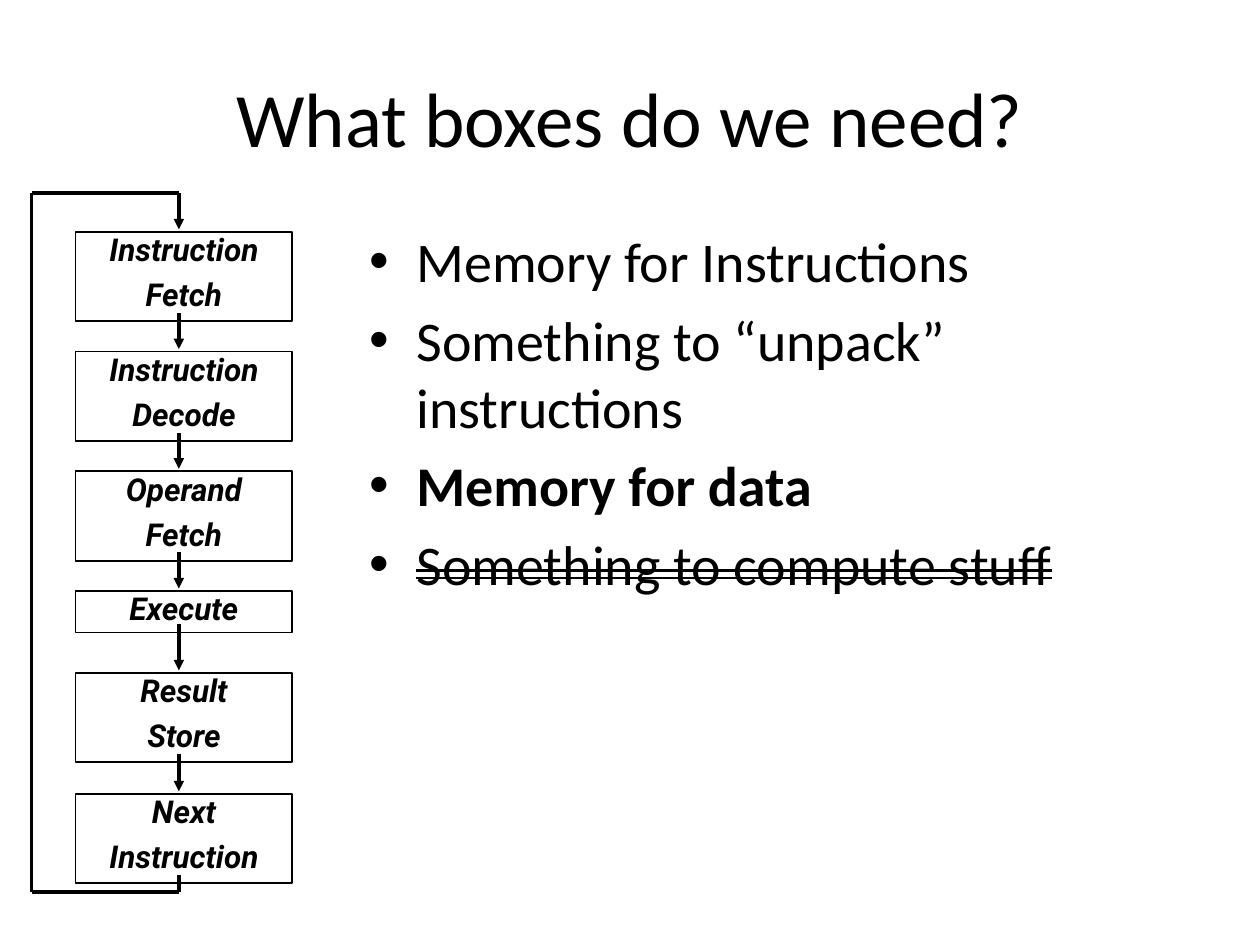
from pptx import Presentation
from pptx.dml.color import RGBColor as RGB
from pptx.enum.shapes import MSO_CONNECTOR as Link, MSO_SHAPE as Shape
from pptx.enum.text import MSO_ANCHOR as Anchor, PP_ALIGN as Align
from pptx.oxml.ns import qn
from pptx.util import Pt
from lxml.etree import SubElement as Sub

COLORS = {"ink": "000000", "paper": "FFFFFF"}
INK = RGB.from_string(COLORS["ink"])

# Cycle steps: top of box, lines of text
STEPS = [
    (132.5, ["Instruction", "Fetch"]),
    (200.9, ["Instruction", "Decode"]),
    (269.3, ["Operand", "Fetch"]),
    (337.7, ["Execute"]),
    (384.5, ["Result", "Store"]),
    (453.6, ["Next", "Instruction"]),
]
LEFT, WIDE = 43.2, 123.8
TALL = {1: 23.8, 2: 51.1}
MID, SIDE, TOP, LOW = 102.2, 18, 110.2, 509.8

# Needs: text, bold, struck out
NEEDS = [
    ("Memory for Instructions", False, False),
    ("Something to “unpack” instructions", False, False),
    ("Memory for data", True, False),
    ("Something to compute stuff", False, True),
]


def add_run(para, text, size, face, bold=False, slant=False):
    run = para.add_run()
    run.text = text
    font = run.font
    font.size, font.name = Pt(size), face
    font.bold, font.italic = bold, slant
    font.color.rgb = INK
    return run


def add_text(slide, left, top, wide, tall, anchor):
    box = slide.shapes.add_textbox(Pt(left), Pt(top), Pt(wide), Pt(tall))
    frame = box.text_frame
    frame.word_wrap = True
    frame.vertical_anchor = anchor
    return frame


def next_para(frame, index):
    return frame.add_paragraph() if index else frame.paragraphs[0]


def add_bullet(para):
    props = para._p.get_or_add_pPr()
    props.set("marL", str(Pt(27)))
    props.set("indent", str(Pt(-27)))
    Sub(props, qn("a:buFont"), typeface="Arial")
    Sub(props, qn("a:buChar"), char="•")


def add_list(slide):
    frame = add_text(slide, 203.8, 126, 480.2, 356.4, Anchor.TOP)
    for i, (text, bold, struck) in enumerate(NEEDS):
        para = next_para(frame, i)
        para.space_before = Pt(6.4)
        add_bullet(para)
        run = add_run(para, text, 32, "Calibri", bold)
        if struck:
            run._r.get_or_add_rPr().set("strike", "dblStrike")


def add_step(slide, top, lines):
    box = slide.shapes.add_shape(
        Shape.RECTANGLE, Pt(LEFT), Pt(top), Pt(WIDE), Pt(TALL[len(lines)]))
    box.shadow.inherit = False
    box.fill.background()
    box.line.color.rgb = INK
    box.line.width = Pt(1)
    frame = box.text_frame
    frame.word_wrap = True
    frame.vertical_anchor = Anchor.TOP
    frame.margin_left = frame.margin_right = Pt(5)
    frame.margin_top = frame.margin_bottom = Pt(2.2)
    for i, text in enumerate(lines):
        para = next_para(frame, i)
        para.alignment = Align.CENTER
        para.line_spacing = 0.86
        para.space_before = Pt(7.2)
        add_run(para, text, 18, "Roboto", True, True)


def add_line(slide, start, end, arrow=False):
    line = slide.shapes.add_connector(
        Link.STRAIGHT, *[Pt(v) for v in (*start, *end)])
    line.line.color.rgb = INK
    line.line.width = Pt(2)
    if arrow:
        Sub(line.line._get_or_add_ln(), qn("a:tailEnd"), type="triangle")
    Sub(line._element.spPr, qn("a:effectLst"))


def add_cycle(slide):
    for top, lines in STEPS:
        add_step(slide, top, lines)
    # Arrows from each step to the next
    ends = [top + TALL[len(lines)] - 4.8 for top, lines in STEPS]
    for low, (top, _) in zip(ends, STEPS[1:]):
        add_line(slide, (MID, low), (MID, top - 1.4), True)
    # Loop back from the last step to the first
    loop = [(MID, ends[-1]), (MID, LOW), (SIDE, LOW), (SIDE, TOP),
            (MID, TOP), (MID, STEPS[0][0] - 1.4)]
    for i, (start, end) in enumerate(zip(loop, loop[1:])):
        add_line(slide, start, end, i == len(loop) - 2)


def main():
    deck = Presentation()
    deck.slide_width, deck.slide_height = Pt(720), Pt(540)
    slide = deck.slides.add_slide(deck.slide_layouts[6])
    fill = slide.background.fill
    fill.solid()
    fill.fore_color.rgb = RGB.from_string(COLORS["paper"])
    # Title
    para = add_text(slide, 36, 21.6, 648, 90, Anchor.MIDDLE).paragraphs[0]
    para.alignment = Align.CENTER
    add_run(para, "What boxes do we need?", 44, "Calibri")
    # Body
    add_list(slide)
    add_cycle(slide)
    deck.save("out.pptx")


if __name__ == "__main__":
    main()
